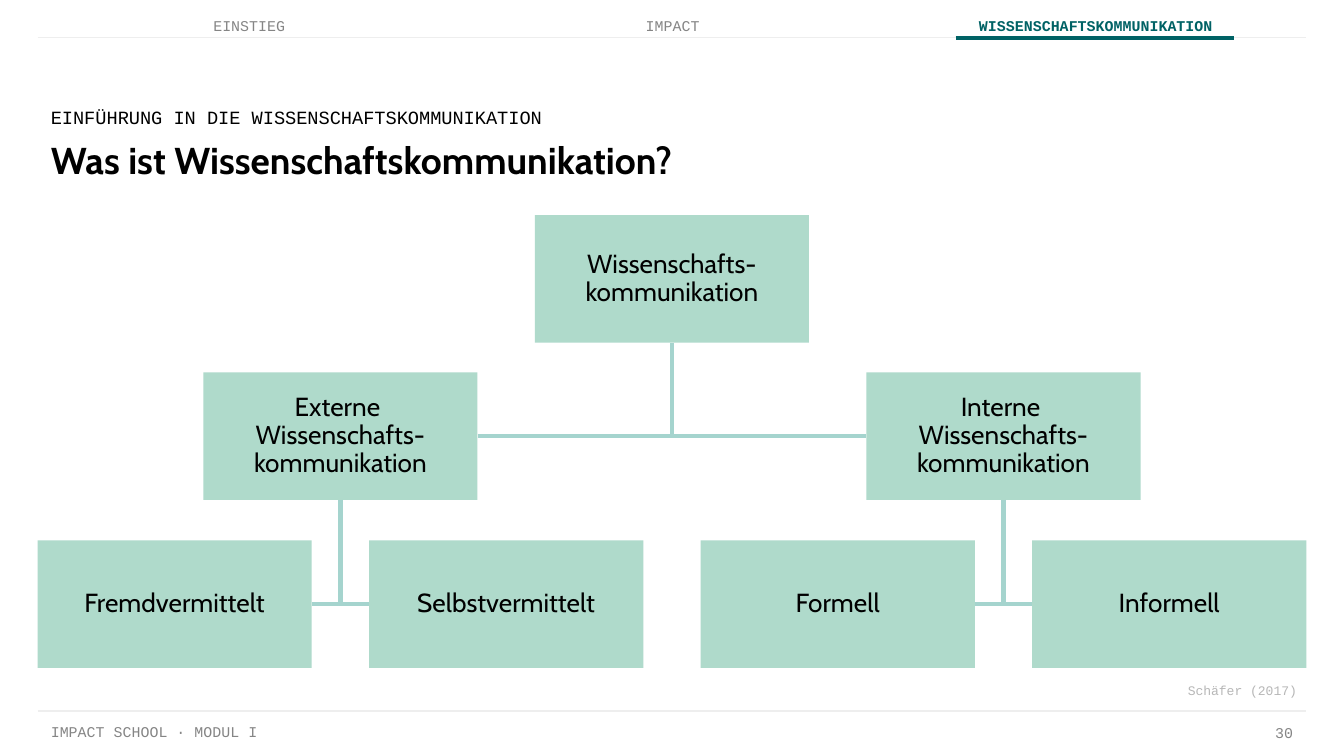
from copy import deepcopy

from lxml import etree
from pptx import Presentation
from pptx.dml.color import RGBColor
from pptx.enum.shapes import MSO_CONNECTOR, MSO_SHAPE
from pptx.enum.text import MSO_ANCHOR, PP_ALIGN
from pptx.oxml.ns import qn
from pptx.util import Inches, Pt

LEFT, CENTER, RIGHT = PP_ALIGN.LEFT, PP_ALIGN.CENTER, PP_ALIGN.RIGHT
TOP, MIDDLE = MSO_ANCHOR.TOP, MSO_ANCHOR.MIDDLE
RECT, STRAIGHT = MSO_SHAPE.RECTANGLE, MSO_CONNECTOR.STRAIGHT
SANS, MONO = "Cabin", "Courier New"
BLACK, GRAY, PALE, RULE = "000000", "858585", "B7B7B7", "EEEEEE"
TEAL, MINT, BRANCH = "006265", "AFDACB", "A5D4CE"

# Content
KICKER = "EINFÜHRUNG IN DIE WISSENSCHAFTSKOMMUNIKATION"
TITLE = "Was ist Wissenschaftskommunikation?"
FOOTER, PAGE, CITATION = "IMPACT SCHOOL · MODUL I", "30", "Schäfer (2017)"
TABS = [  # label, left, width, active
    ("EINSTIEG", 0.98, 1.75, False),
    ("IMPACT", 3.34, 3.33, False),
    ("WISSENSCHAFTSKOMMUNIKATION", 6.49, 3.33, True),
]
TREE = ("Wissenschafts-\nkommunikation", [
    ("Externe \nWissenschafts-\nkommunikation",
     [("Fremdvermittelt", []), ("Selbstvermittelt", [])]),
    ("Interne \nWissenschafts-\nkommunikation",
     [("Formell", []), ("Informell", [])]),
])

# Layout
X0, X1 = 0.28, 9.72
BOX_W, BOX_H = 2.04, 0.95
LEVEL_TOPS = [1.6, 2.77, 4.02]
LEAVES = 4
PITCH = (X1 - X0 - BOX_W) / (LEAVES - 1)

prs = Presentation()
prs.slide_width, prs.slide_height = Inches(10), Inches(10 * 9 / 16)
s = prs.slides.add_slide(prs.slide_layouts[6])


def rgb(color):
    return RGBColor.from_string(color)


def write(sp, text, size=8, font=MONO, color=GRAY, bold=False, align=LEFT,
          anchor=TOP, inset=(0.1, 0.1), spacing=None):
    tf = sp.text_frame
    tf.word_wrap = True
    tf.vertical_anchor = anchor
    tf.margin_left = tf.margin_right = Inches(inset[0])
    tf.margin_top = tf.margin_bottom = Inches(inset[1])
    p = tf.paragraphs[0]
    p.text = text
    p.alignment = align
    if spacing:
        p.line_spacing = spacing
    for r in p.runs:
        r.font.size, r.font.name, r.font.bold = Pt(size), font, bold
        r.font.color.rgb = rgb(color)
    # Line breaks take the size of the text around them
    for br in p._p.findall(qn("a:br")):
        br.append(deepcopy(p.runs[0]._r.rPr))


def add_text(text, x, y, w, h, **fmt):
    sp = s.shapes.add_textbox(Inches(x), Inches(y), Inches(w), Inches(h))
    write(sp, text, **fmt)


def add_line(x1, y1, x2, y2, color, width):
    line = s.shapes.add_connector(
        STRAIGHT, Inches(x1), Inches(y1), Inches(x2), Inches(y2))
    line.line.color.rgb = rgb(color)
    line.line.width = Pt(width)
    etree.SubElement(line._element.spPr, qn("a:effectLst"))
    return line


def add_box(text, center, top):
    sp = s.shapes.add_shape(RECT, Inches(center - BOX_W / 2), Inches(top),
                            Inches(BOX_W), Inches(BOX_H))
    sp.shadow.inherit = False
    sp.fill.solid()
    sp.fill.fore_color.rgb = rgb(MINT)
    sp.line.fill.background()
    write(sp, text, size=14, font=SANS, color=BLACK, align=CENTER,
          anchor=MIDDLE, inset=(0.01, 0.01), spacing=0.9)
    return sp


def add_branch(node, level=0, first_leaf=0):
    """Draw a node centred over its children; return box, centre, next leaf."""
    text, children = node
    if not children:
        center = X0 + BOX_W / 2 + first_leaf * PITCH
        return add_box(text, center, LEVEL_TOPS[level]), center, first_leaf + 1
    boxes, centers = [], []
    for child in children:
        box, x, first_leaf = add_branch(child, level + 1, first_leaf)
        boxes.append(box)
        centers.append(x)
    center = sum(centers) / len(centers)
    parent = add_box(text, center, LEVEL_TOPS[level])
    bar_y = LEVEL_TOPS[level + 1] + BOX_H / 2
    bar = add_line(centers[0], bar_y, centers[-1], bar_y, BRANCH, 2.25)
    bar.begin_connect(boxes[0], 3)
    bar.end_connect(boxes[-1], 1)
    stem = add_line(center, LEVEL_TOPS[level] + BOX_H, center, bar_y,
                    BRANCH, 2.25)
    stem.begin_connect(parent, 2)
    return parent, center, first_leaf


# Footer and rules
add_text(FOOTER, X0, 5.31, 6.3, 0.34)
add_text(PAGE, 9.29, 5.29, 0.43, 0.34, align=RIGHT, anchor=MIDDLE, spacing=0.8)
for y in (5.29, 0.28):
    add_line(X0, y, X1, y, RULE, 0.75)

# Navigation tabs
for label, x, w, active in TABS:
    add_text(label, x, 0.02, w, 0.34, color=TEAL if active else GRAY,
             bold=active, align=CENTER, anchor=MIDDLE)
add_line(7.11, 0.28, 9.18, 0.28, TEAL, 2.25)

# Headings and citation
add_text(TITLE, X0, 0.92, 7.77, 0.52, size=20, font=SANS, color=BLACK, bold=True)
add_text(KICKER, X0, 0.77, 7.77, 0.2, size=10, color=BLACK, anchor=MIDDLE)
add_text(CITATION, 7.81, 5.04, 1.91, 0.19, size=7, color=PALE, align=RIGHT,
         inset=(0.07, 0.04))

# Tree diagram
add_branch(TREE)

prs.save("out.pptx")
